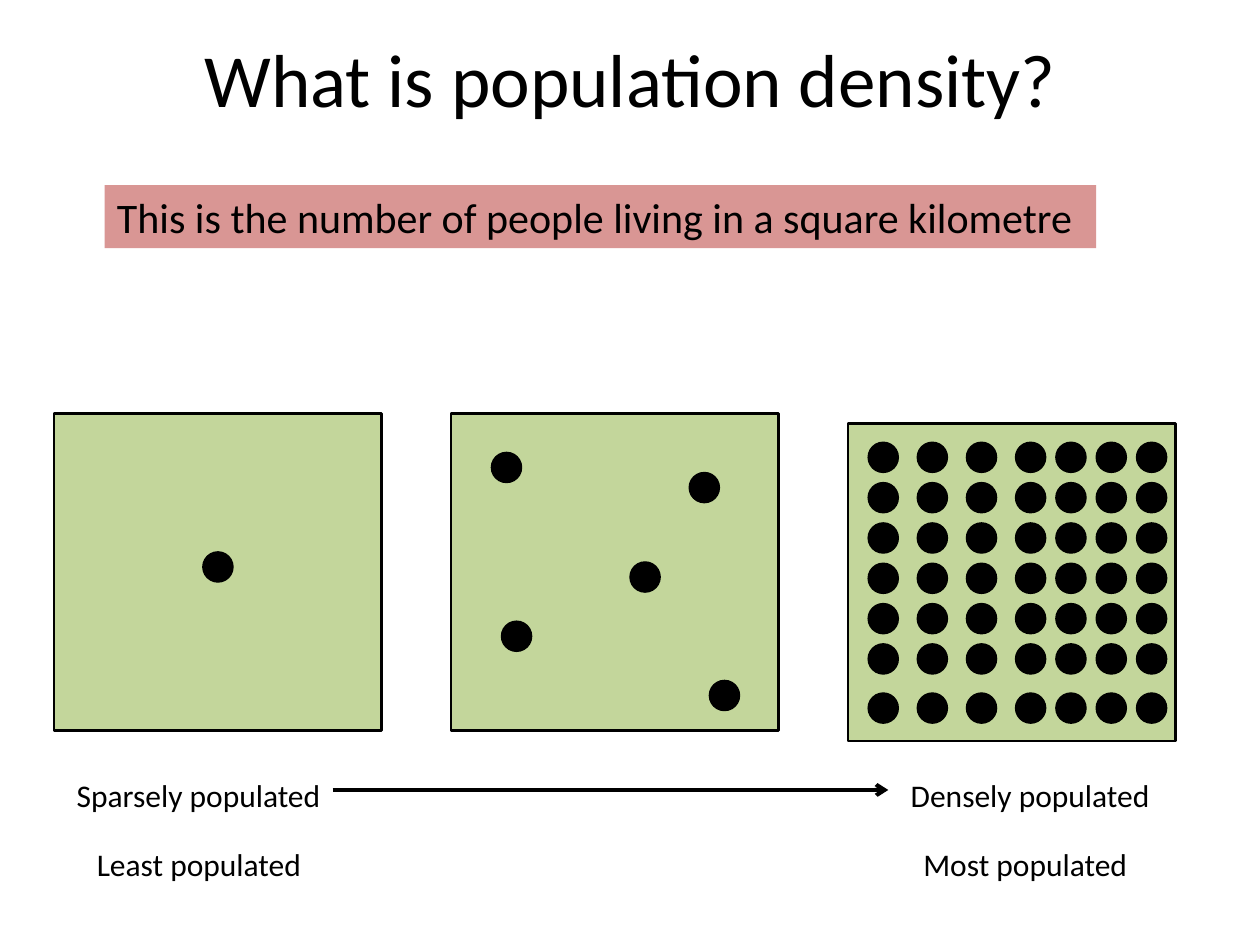
from dataclasses import dataclass
from itertools import accumulate

from lxml import etree
from pptx import Presentation
from pptx.dml.color import RGBColor
from pptx.enum import shapes, text
from pptx.oxml import ns
from pptx.util import Inches, Pt


@dataclass(frozen=True)
class Theme:
    font: str = "Calibri"
    ink: RGBColor = RGBColor(0x00, 0x00, 0x00)
    land: RGBColor = RGBColor(0xC3, 0xD6, 0x9B)
    banner: RGBColor = RGBColor(0xD9, 0x96, 0x94)
    title_size: float = 42.9
    banner_size: float = 24
    label_size: float = 18
    land_line: float = 1.5
    dot_line: float = 0.75
    arrow_line: float = 2.25


THEME = Theme()
DOT = 0.24
SQUARE = (2.6, 2.52)


def add_filled(parent, preset, box, fill, line_width=None):
    shape = parent.add_shape(preset, *map(Inches, box))
    shape.shadow.inherit = False
    shape.fill.solid()
    shape.fill.fore_color.rgb = fill
    if line_width is None:
        shape.line.fill.background()
    else:
        shape.line.color.rgb = THEME.ink
        shape.line.width = Pt(line_width)
    return shape


def write(shape, words, size, alignment=text.PP_ALIGN.LEFT):
    frame = shape.text_frame
    frame_format = {"word_wrap": True, "vertical_anchor": text.MSO_ANCHOR.TOP}
    for name, value in frame_format.items():
        setattr(frame, name, value)
    paragraph = frame.paragraphs[0]
    paragraph.alignment = alignment
    run = paragraph.add_run()
    run.text = words
    for name, value in {"name": THEME.font, "size": Pt(size)}.items():
        setattr(run.font, name, value)
    run.font.color.rgb = THEME.ink
    return paragraph


def add_title(slide, box, words):
    shape = slide.shapes.add_textbox(*map(Inches, box))
    write(shape, words, THEME.title_size, text.PP_ALIGN.CENTER)


def add_banner(slide, box, words):
    shape = add_filled(slide.shapes, shapes.MSO_SHAPE.RECTANGLE, box, THEME.banner)
    write(shape, words, THEME.banner_size)


def add_land_square(slide, left, top, dots):
    """Draw one square kilometre; dots are offsets from its corner."""
    add_filled(slide.shapes, shapes.MSO_SHAPE.RECTANGLE, (left, top, *SQUARE),
               THEME.land, THEME.land_line)
    people = slide.shapes.add_group_shape().shapes if len(dots) > 1 else slide.shapes
    for x, y in dots:
        add_filled(people, shapes.MSO_SHAPE.OVAL, (left + x, top + y, DOT, DOT),
                   THEME.ink, THEME.dot_line)


def add_label_row(slide, box, left_label, right_label, tab):
    """Write two labels on one line, the second at a tab stop."""
    shape = slide.shapes.add_textbox(*map(Inches, box))
    paragraph = write(shape, f"{left_label}\t{right_label}", THEME.label_size)
    properties = paragraph._p.get_or_add_pPr()
    stops = etree.SubElement(properties, ns.qn("a:tabLst"))
    etree.SubElement(stops, ns.qn("a:tab"), pos=str(Inches(tab)), algn="l")


def add_arrow(slide, left, right, y):
    arrow = slide.shapes.add_connector(
        shapes.MSO_CONNECTOR.STRAIGHT, *map(Inches, (left, y, right, y)))
    arrow.line.color.rgb = THEME.ink
    arrow.line.width = Pt(THEME.arrow_line)
    etree.SubElement(arrow.line._get_or_add_ln(), ns.qn("a:tailEnd"), type="arrow")
    etree.SubElement(arrow._element.spPr, ns.qn("a:effectLst"))


def main():
    presentation = Presentation()
    presentation.slide_width, presentation.slide_height = Inches(10), Inches(7.5)
    slide = presentation.slides.add_slide(presentation.slide_layouts[6])

    add_title(slide, (0, 0.21, 10, 1.25), "What is population density?")
    add_banner(slide, (0.83, 1.47, 7.87, 0.5),
               "This is the number of people living in a square kilometre")

    wide, narrow = 0.39, 0.32
    columns = list(accumulate([0.16] + [wide] * 3 + [narrow] * 3))
    rows = list(accumulate([0.15] + [narrow] * 5 + [wide]))
    sparse = [(1.18, 1.1)]
    scattered = [(0.32, 0.31), (0.4, 1.65), (1.89, 0.47), (1.42, 1.18), (2.05, 2.12)]
    dense = [(x, y) for y in rows for x in columns]
    squares = [(3.28, sparse), (3.28, scattered), (3.36, dense)]
    for index, (top, dots) in enumerate(squares):
        add_land_square(slide, 0.43 + 3.15 * index, top, dots)

    add_label_row(slide, (0.51, 6.11, 8.9, 0.4),
                  "Sparsely populated", "Densely populated", 6.62)
    add_arrow(slide, 2.64, 7.05, 6.27)
    add_label_row(slide, (0.67, 6.66, 8.66, 0.4),
                  "Least populated", "Most populated", 6.56)
    presentation.save("out.pptx")


if __name__ == "__main__":
    main()
